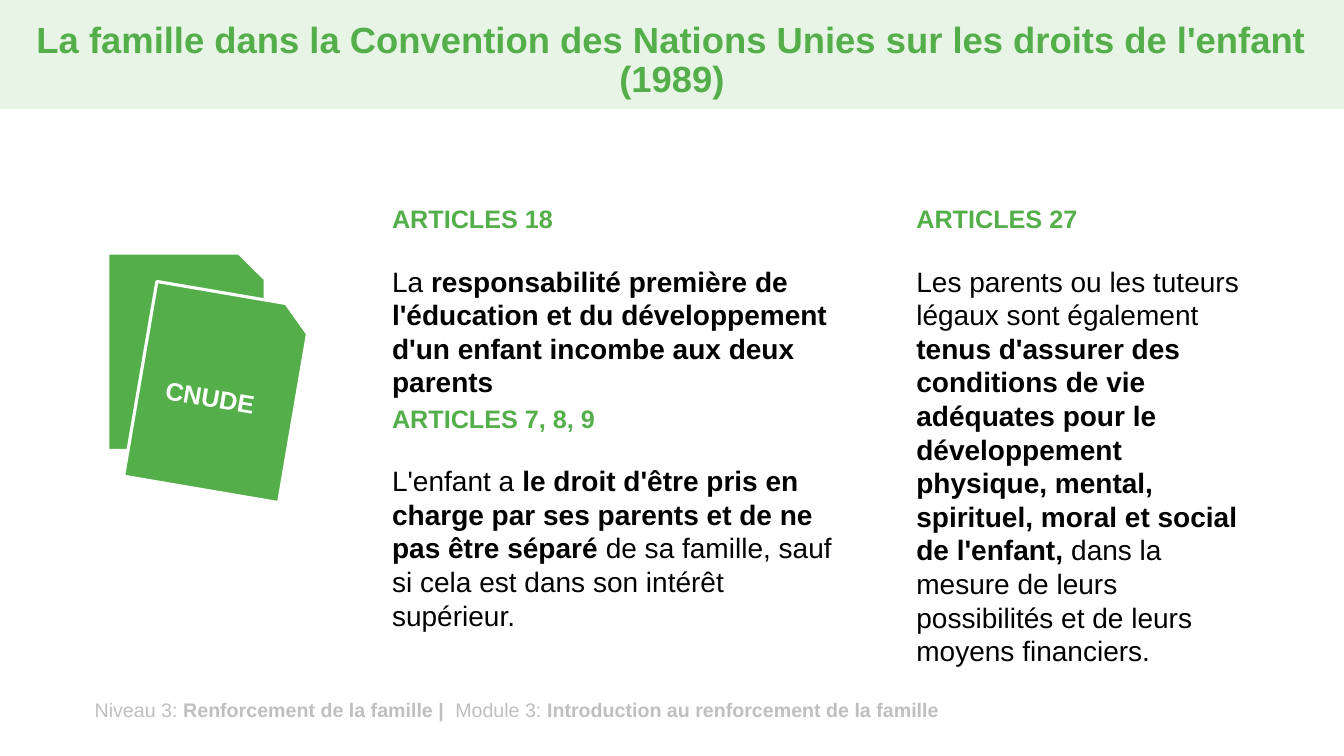
from dataclasses import dataclass

from pptx import Presentation
from pptx import util as u
from pptx.dml.color import RGBColor
from pptx.enum import shapes, text

PX = 9144  # EMU per px, 100 px to the inch


@dataclass(frozen=True)
class Theme:
    font: str = "Arial"
    green: str = "54AF4B"
    pale: str = "E8F4E6"
    grey: str = "BFBFBF"
    black: str = "000000"
    white: str = "FFFFFF"
    title: int = 26
    body: int = 20
    heading: int = 18
    footer: int = 14


THEME = Theme()
HEADING_HEIGHT = 68
BODY_OFFSET = 74


def px(*lengths):
    return [u.Emu(length * PX) for length in lengths]


def write(shape, spans, size, color, align=text.PP_ALIGN.LEFT,
          anchor=text.MSO_ANCHOR.TOP):
    """Fill a shape with one paragraph of (wording, bold) spans."""
    frame = shape.text_frame
    frame.word_wrap = True
    frame.vertical_anchor = anchor
    para = frame.paragraphs[0]
    para.alignment = align
    for wording, bold in spans:
        span = para.add_run()
        span.text = wording
        span.font.name = THEME.font
        span.font.size = u.Pt(size)
        span.font.bold = bold
        span.font.color.rgb = RGBColor.from_string(color)
    return para


def add_text(page, box, spans, size, color, **layout):
    shape = page.shapes.add_textbox(*px(*box))
    write(shape, spans, size, color, **layout)
    return shape


def add_filled(page, kind, box, color):
    shape = page.shapes.add_shape(kind, *px(*box))
    shape.shadow.inherit = False
    shape.fill.solid()
    shape.fill.fore_color.rgb = RGBColor.from_string(color)
    shape.line.fill.background()
    return shape


def add_header(page, box, wording):
    left, top, width, height = box
    inset = 13
    title = page.shapes.title
    title.left, title.top, title.width, title.height = px(
        left, top + inset, width, height - inset)
    para = write(title, [(wording, True)], THEME.title, THEME.green,
                 text.PP_ALIGN.CENTER, text.MSO_ANCHOR.MIDDLE)
    para.line_spacing = 0.9
    title.text_frame.auto_size = text.MSO_AUTO_SIZE.NONE
    band = add_filled(page, shapes.MSO_SHAPE.RECTANGLE, box, THEME.pale)
    title.element.addprevious(band.element)


def add_article(page, box, heading, spans):
    left, top, width, height = box
    add_text(page, (left, top, width, HEADING_HEIGHT), [(heading, True)],
             THEME.heading, THEME.green, anchor=text.MSO_ANCHOR.MIDDLE)
    body = add_text(page, (left, top + BODY_OFFSET, width, height - BODY_OFFSET),
                    spans, THEME.body, THEME.black)
    body.text_frame.auto_size = text.MSO_AUTO_SIZE.SHAPE_TO_FIT_TEXT


def add_documents(page, box, label):
    """Draw two overlapping sheets, the front one tilted and labelled."""
    left, top, width, height = box
    group = page.shapes.add_group_shape()
    sheets = []
    for shift_x, shift_y, angle in ((0, 0, 0), (31, 40, 9.7)):
        sheet = add_filled(page, shapes.MSO_SHAPE.SNIP_1_RECTANGLE,
                           (left + shift_x, top + shift_y, width, height), THEME.green)
        sheet.line.color.rgb = RGBColor.from_string(THEME.white)
        sheet.line.width = u.Pt(2.25)
        sheet.rotation = angle
        sheets.append(sheet)
        group.element.append(sheet.element)
    group_box = px(left, top, width + 31, height + 40)
    group.left, group.top, group.width, group.height = group_box
    frame = group.element.grpSpPr.xfrm
    frame.chOff.x, frame.chOff.y = group_box[:2]
    frame.chExt.cx, frame.chExt.cy = group_box[2:]
    write(sheets[-1], [(label, True)], THEME.heading, THEME.white,
          text.PP_ALIGN.CENTER, text.MSO_ANCHOR.MIDDLE)


def add_footer(page, box):
    add_text(page, box, [
        ("Niveau 3: ", False),
        ("Renforcement de la famille |  ", True),
        ("Module 3: ", False),
        ("Introduction au renforcement de la famille", True),
    ], THEME.footer, THEME.grey)


def main():
    deck = Presentation()
    deck.slide_width, deck.slide_height = px(1333, 750)
    page = deck.slides.add_slide(deck.slide_layouts.get_by_name("Title Only"))
    add_header(page, (0, 0, 1333, 108),
               "La famille dans la Convention des Nations Unies "
               "sur les droits de l'enfant (1989)")
    add_footer(page, (84, 687, 1062, 34))
    add_article(page, (379, 381, 471, 252), "ARTICLES 7, 8, 9", [
        ("L'enfant a ", False),
        ("le droit d'être pris en charge par ses parents "
         "et de ne pas être séparé ", True),
        ("de sa famille, sauf si cela est dans son intérêt supérieur.", False),
    ])
    add_article(page, (379, 183, 471, 185), "ARTICLES 18", [
        ("La ", False),
        ("responsabilité première de l'éducation et du développement "
         "d'un enfant incombe aux deux parents", True),
    ])
    add_article(page, (899, 183, 351, 421), "ARTICLES 27", [
        ("Les parents ou les tuteurs légaux sont également ", False),
        ("tenus d'assurer des conditions de vie adéquates pour le développement "
         "physique, mental, spirituel, moral et social de l'enfant, ", True),
        ("dans la mesure de leurs possibilités et de leurs moyens financiers.", False),
    ])
    add_documents(page, (107, 251, 156, 196), "CNUDE")
    deck.save("out.pptx")


if __name__ == "__main__":
    main()
